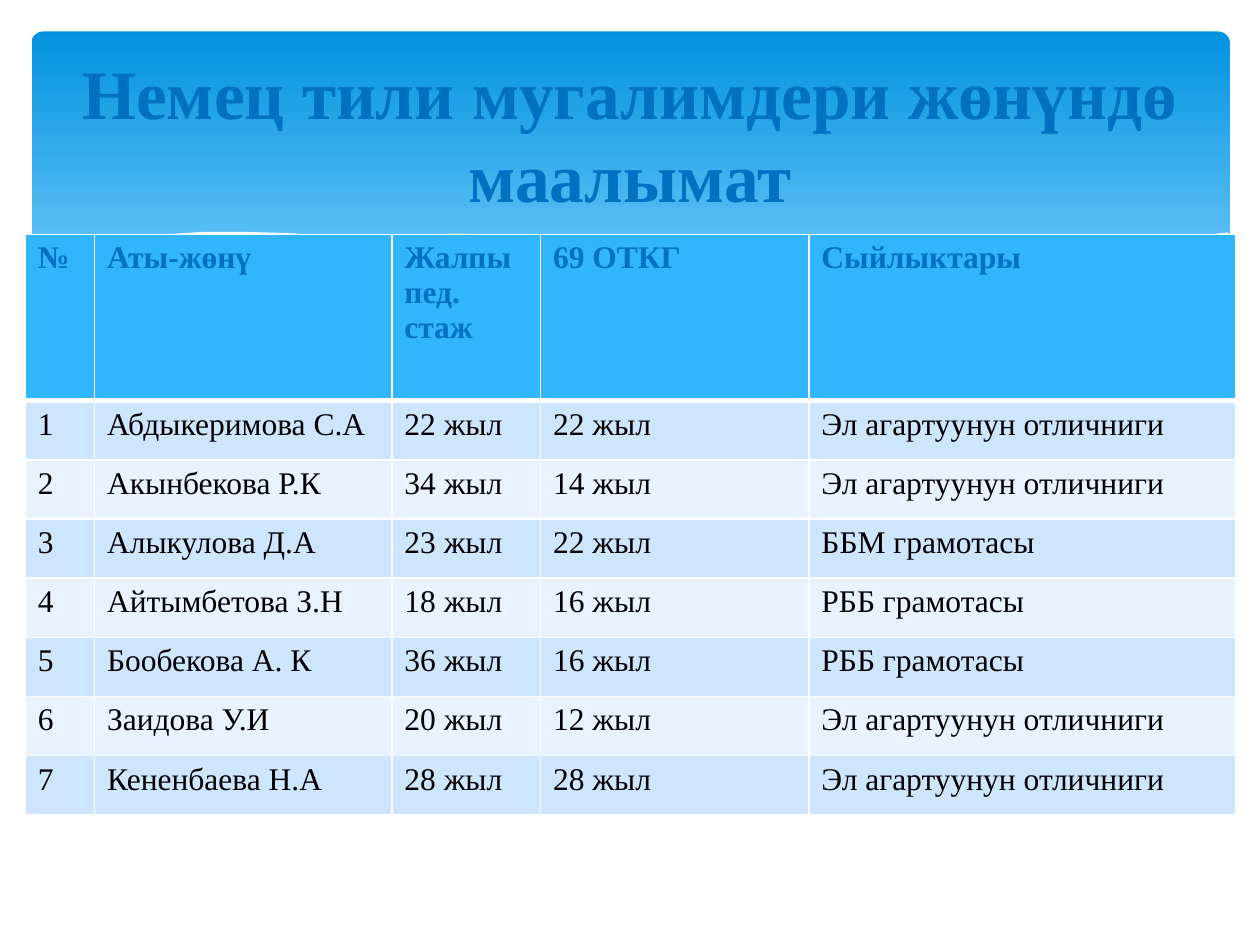
from lxml import etree
from pptx import Presentation, util as u
from pptx.dml.color import RGBColor
from pptx.enum import shapes, text
from pptx.oxml.ns import qn

THEME = {
    "font": "Times New Roman", "title_size": 39.6, "cell_size": 18,
    "accent": "0070C0", "body": "000000", "white": "FFFFFF", "wave": "C6E7FC",
    "banner": ("0293E0", "83D3FE"), "header": "31B6FD", "bands": ("CEE5FE", "E8F3FF"),
}
# Wave points are in hundredths of an inch; fill opacity is in percent.
WAVES = [
    (29, [(975, 200), (935, 207), (861, 223), (779, 242), (729, 253), (661, 265),
          (705, 271), (757, 276), (814, 278), (872, 274), (921, 265), (963, 252),
          (976, 247), (976, 200)]),
    (40, [(893, 273), (837, 265), (775, 254), (706, 240), (629, 222), (569, 208),
          (514, 198), (465, 191), (420, 187), (361, 185), (313, 188), (286, 191),
          (342, 199), (404, 211), (449, 222), (530, 240), (601, 255), (665, 266),
          (722, 274), (785, 278), (838, 278), (893, 273)]),
    (None, [(309, 195), (344, 190), (387, 187), (450, 188), (510, 192), (582, 200),
            (636, 208), (695, 219), (760, 233), (831, 251), (907, 272)]),
    (None, [(613, 257), (672, 241), (748, 223), (806, 210), (866, 199), (924, 190),
            (975, 185)]),
    (100, [(977, 246), (930, 262), (887, 271), (837, 276), (778, 276), (708, 270),
           (626, 258), (555, 245), (475, 227), (418, 213), (365, 202), (316, 194),
           (271, 188), (230, 185), (193, 184), (161, 184), (132, 186), (106, 189),
           (85, 193), (67, 197), (52, 201), (40, 205), (29, 210), (23, 213),
           (23, 329), (977, 329)]),
]
COLUMNS = [0.55, 2.36, 1.18, 2.13, 3.39]
ROWS = [1.32] + [0.47] * 7
AWARD = "Эл агартуунун отличниги"
TEACHERS = [
    ("№", "Аты-жөнү", "Жалпы пед.\nстаж", "69 ОТКГ", "Сыйлыктары"),
    ("1", "Абдыкеримова С.А", "22 жыл", "22 жыл", AWARD),
    ("2", "Акынбекова Р.К", "34 жыл", "14 жыл", AWARD),
    ("3", "Алыкулова Д.А", "23 жыл", "22 жыл", "ББМ грамотасы"),
    ("4", "Айтымбетова З.Н", "18 жыл", "16 жыл", "РББ грамотасы"),
    ("5", "Бообекова А. К", "36 жыл", "16 жыл", "РББ грамотасы"),
    ("6", "Заидова У.И", "20 жыл", "12 жыл", AWARD),
    ("7", "Кененбаева Н.А", "28 жыл", "28 жыл", AWARD),
]


def add_run(p, words, size, color, bold):
    r = p.add_run()
    r.text = words
    r.font.name, r.font.size, r.font.bold = THEME["font"], u.Pt(size), bold
    r.font.color.rgb = RGBColor.from_string(color)


def add_border(cell, side, points):
    ln = etree.SubElement(cell._tc.get_or_add_tcPr(), qn(f"a:ln{side}"), w=str(u.Pt(points)))
    fill = etree.SubElement(ln, qn("a:solidFill"))
    etree.SubElement(fill, qn("a:srgbClr"), val=THEME["white"])


prs = Presentation()
prs.slide_width, prs.slide_height = u.Inches(10), u.Inches(7.5)
s = prs.slides.add_slide(prs.slide_layouts[5])

# Banner with waves along its lower edge
banner = s.shapes.add_shape(shapes.MSO_SHAPE.ROUNDED_RECTANGLE, u.Inches(0.25),
                            u.Inches(0.25), u.Inches(9.51), u.Inches(2.7))
banner.adjustments[0] = 0.034
banner.shadow.inherit = False
banner.line.fill.background()
banner.fill.gradient()
banner.fill.gradient_angle = 270
for stop, color, position in zip(banner.fill.gradient_stops, THEME["banner"], (0, 0.9)):
    stop.color.rgb = RGBColor.from_string(color)
    stop.position = position

for opacity, points in WAVES:
    builder = s.shapes.build_freeform(*points[0], scale=u.Inches(0.01))
    builder.add_line_segments(points[1:], close=opacity is not None)
    wave = builder.convert_to_shape()
    wave.shadow.inherit = False
    if opacity is None:
        wave.fill.background()
        wave.line.color.rgb = RGBColor.from_string(THEME["white"])
        wave.line.width = 0
        continue
    wave.line.fill.background()
    wave.fill.solid()
    wave.fill.fore_color.rgb = RGBColor.from_string(THEME["white" if opacity == 100 else "wave"])
    if opacity < 100:
        rgb = wave._element.spPr.find(qn("a:solidFill")).find(qn("a:srgbClr"))
        etree.SubElement(rgb, qn("a:alpha"), val=str(opacity * 1000))

# Table of teachers
table = s.shapes.add_table(len(ROWS), len(COLUMNS), u.Inches(0.2), u.Inches(1.86),
                           u.Inches(sum(COLUMNS)), u.Inches(sum(ROWS))).table
for column, width in zip(table.columns, COLUMNS):
    column.width = u.Inches(width)
for i, (row, height, values) in enumerate(zip(table.rows, ROWS, TEACHERS)):
    row.height = u.Inches(height)
    header = i == 0
    for cell, value in zip(row.cells, values):
        for side in "LRTB":
            heavy = (i, side) in ((0, "B"), (1, "T"))
            add_border(cell, side, 3 if heavy else 1)
        cell.fill.solid()
        cell.fill.fore_color.rgb = RGBColor.from_string(
            THEME["header"] if header else THEME["bands"][(i - 1) % 2])
        tf = cell.text_frame
        for j, line in enumerate(value.split("\n")):
            p = tf.add_paragraph() if j else tf.paragraphs[0]
            add_run(p, line, THEME["cell_size"], THEME["accent" if header else "body"], header)

# Title, in front of the banner
title = s.shapes.title
title.left, title.top = u.Inches(0.5), u.Inches(0.37)
title.width, title.height = u.Inches(9), u.Inches(1.37)
s.shapes._spTree.append(title._element)
tf = title.text_frame
tf.word_wrap, tf.auto_size = True, text.MSO_AUTO_SIZE.NONE
tf.vertical_anchor = text.MSO_ANCHOR.MIDDLE
p = tf.paragraphs[0]
p.alignment = text.PP_ALIGN.CENTER
add_run(p, "Немец тили мугалимдери жөнүндө маалымат", THEME["title_size"], THEME["accent"], True)

prs.save("out.pptx")
